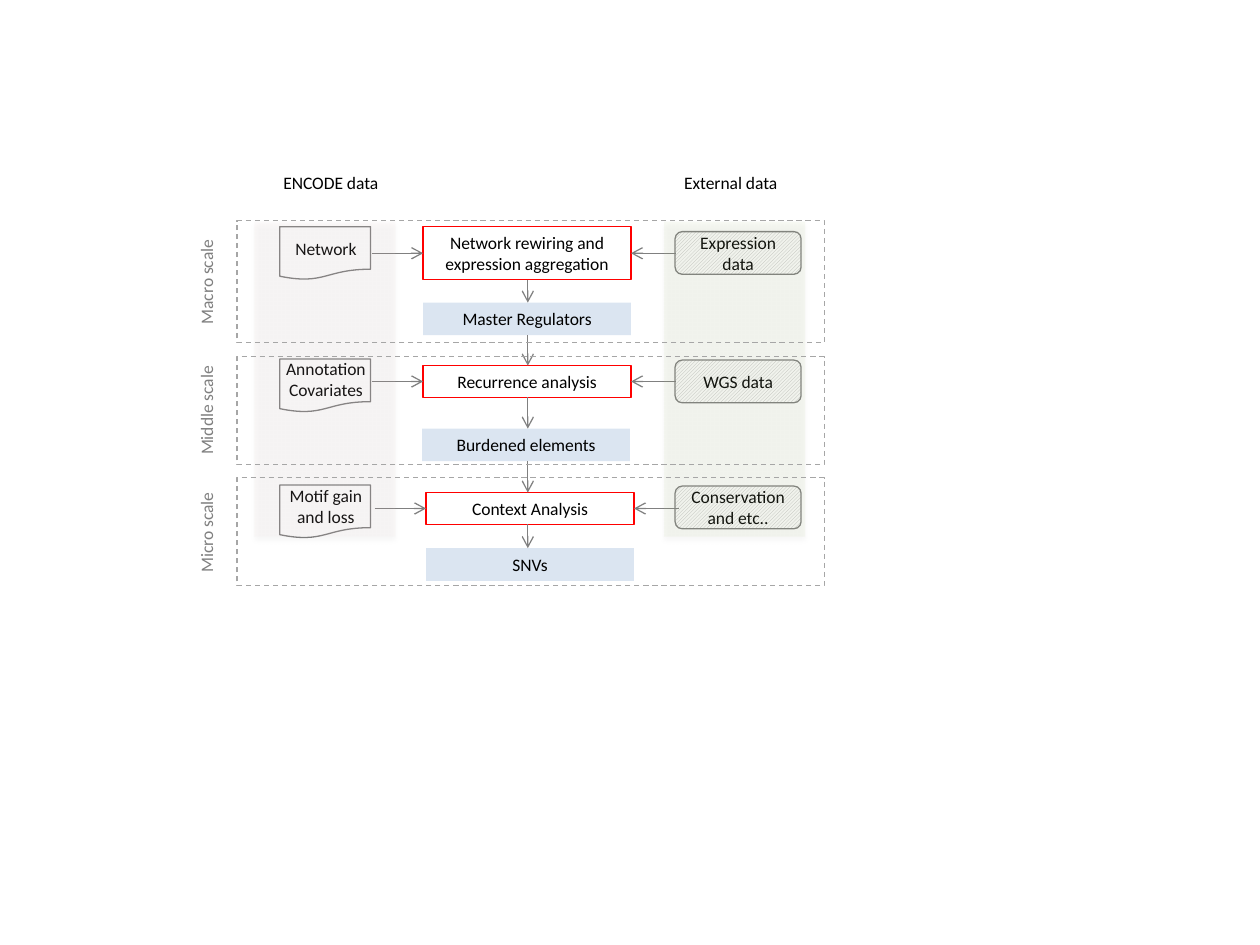
from itertools import pairwise

from lxml import etree
from pptx import Presentation
from pptx.dml.color import RGBColor
from pptx.enum.dml import MSO_LINE, MSO_PATTERN
from pptx.enum.shapes import MSO_CONNECTOR, MSO_SHAPE
from pptx.enum.text import MSO_ANCHOR, MSO_AUTO_SIZE, PP_ALIGN
from pptx.oxml import parse_xml
from pptx.oxml.ns import qn
from pptx.util import Cm, Pt

RECT = MSO_SHAPE.RECTANGLE
DOCUMENT = MSO_SHAPE.FLOWCHART_DOCUMENT
ROUNDED = MSO_SHAPE.FLOWCHART_ALTERNATE_PROCESS
STRAIGHT = MSO_CONNECTOR.STRAIGHT
HATCH = MSO_PATTERN.LIGHT_UPWARD_DIAGONAL
DASH = MSO_LINE.DASH
CENTER = PP_ALIGN.CENTER
MIDDLE = MSO_ANCHOR.MIDDLE
TOP = MSO_ANCHOR.TOP
FIT = MSO_AUTO_SIZE.SHAPE_TO_FIT_TEXT

COLORS = {
    "text": "000000", "scale": "7F7F7F", "outline": "808080",
    "frame": "A6A6A6", "analysis": "FF0000", "result": "B9CDE5",
    "encode": "F2DCDB", "external": "C3D69B",
    "hatch": "BFBFBF", "paper": "FFFFFF",
}
SHADOW = (
    '<a:effectLst xmlns:a="http://schemas.openxmlformats.org/drawingml/2006/main">'
    '<a:outerShdw blurRad="39400" dist="22900" dir="5400000" rotWithShape="0">'
    '<a:srgbClr val="000000"><a:alpha val="35000"/></a:srgbClr>'
    '</a:outerShdw></a:effectLst>'
)

ANALYSIS_W, RESULT_H = 4.19, 0.66
DOC_LEFT, DOC_W, DOC_H = 5.64, 1.83, 1.07
EXTERNAL_LEFT, EXTERNAL_W, EXTERNAL_H = 13.61, 2.54, 0.86
FLOW_X = 10.64
DOC_ARROW, EXTERNAL_ARROW = 1.04, 0.9

SCALES = [
    {"name": "Macro scale", "name_y": 5.68, "frame": (4.45, 2.46),
     "doc": (["Network"], 4.57, 4.67, 0.69),
     "external": ("Expression data", 4.67),
     "analysis": ("Network rewiring and expression aggregation", 8.53, 4.57, 1.07),
     "result": ("Master Regulators", 8.53, 6.1)},
    {"name": "Middle scale", "name_y": 8.27, "frame": (7.19, 2.18),
     "doc": (["Annotation", "Covariates"], 7.24, 7.09, 1.12),
     "external": ("WGS data", 7.26),
     "analysis": ("Recurrence analysis", 8.53, 7.37, 0.64),
     "result": ("Burdened elements", 8.51, 8.64)},
    {"name": "Micro scale", "name_y": 10.73, "frame": (9.63, 2.18),
     "doc": (["Motif gain and loss"], 9.78, 9.65, 1.12),
     "external": ("Conservation and etc..", 9.8),
     "analysis": ("Context Analysis", 8.59, 9.93, 0.64),
     "result": ("SNVs", 8.59, 11.05)},
]


def rgb(name):
    return RGBColor.from_string(COLORS[name])


class Diagram:
    font, size, weight = "Calibri", Pt(10), Pt(0.75)

    def __init__(self, slide):
        self.slide = slide

    def add_lines(self, frame, lines, color="text", anchor=MIDDLE):
        frame.vertical_anchor = anchor
        for index, line in enumerate(lines):
            paragraph = frame.add_paragraph() if index else frame.paragraphs[0]
            paragraph.alignment = CENTER
            run = paragraph.add_run()
            run.text = line
            run.font.name, run.font.size = self.font, self.size
            run.font.color.rgb = rgb(color)

    def box(self, kind, left, top, width, height, text=None, line=None,
            fill=None, opacity=100, shapes=None):
        shapes = shapes or self.slide.shapes
        box = shapes.add_shape(kind, Cm(left), Cm(top), Cm(width), Cm(height))
        box.shadow.inherit = False
        if fill:
            box.fill.solid()
            box.fill.fore_color.rgb = rgb(fill)
            tint = box._element.spPr.find(".//" + qn("a:srgbClr"))
            etree.SubElement(tint, qn("a:alpha")).set("val", str(opacity * 1000))
        else:
            box.fill.background()
        if line:
            box.line.color.rgb = rgb(line)
            box.line.width = self.weight
        else:
            box.line.fill.background()
        if text:
            self.add_lines(box.text_frame, [text])
        return box

    def label(self, left, top, width, height, lines, color="text",
              wrap=True, rotation=0, shapes=None):
        shapes = shapes or self.slide.shapes
        label = shapes.add_textbox(Cm(left), Cm(top), Cm(width), Cm(height))
        label.rotation = rotation
        label.text_frame.word_wrap = wrap
        label.text_frame.auto_size = FIT
        self.add_lines(label.text_frame, lines, color, TOP)

    def document(self, lines, top, text_top, text_height):
        shapes = self.slide.shapes.add_group_shape().shapes
        self.box(DOCUMENT, DOC_LEFT, top, DOC_W, DOC_H, line="outline", shapes=shapes)
        self.label(DOC_LEFT - 0.15, text_top, 2.16, text_height, lines, shapes=shapes)

    def external(self, text, top):
        source = self.box(ROUNDED, EXTERNAL_LEFT, top, EXTERNAL_W, EXTERNAL_H,
                          text, line="outline")
        source.fill.patterned()
        source.fill.pattern = HATCH
        source.fill.fore_color.rgb = rgb("hatch")
        source.fill.back_color.rgb = rgb("paper")

    def arrow(self, x1, y1, x2, y2):
        arrow = self.slide.shapes.add_connector(
            STRAIGHT, Cm(x1), Cm(y1), Cm(x2), Cm(y2))
        arrow.line.color.rgb = rgb("outline")
        arrow.line.width = self.weight
        properties = arrow._element.spPr
        outline = properties.find(qn("a:ln"))
        etree.SubElement(outline, qn("a:tailEnd")).set("type", "arrow")
        etree.SubElement(properties, qn("a:effectLst"))

    def panel(self, left, fill):
        panel = self.box(RECT, left, 4.47, 2.84, 6.35, fill=fill, opacity=10)
        properties = panel._element.spPr
        properties.replace(properties.find(qn("a:effectLst")), parse_xml(SHADOW))

    def scale(self, scale):
        result, result_left, result_top = scale["result"]
        analysis, left, top, height = scale["analysis"]
        self.box(RECT, result_left, result_top, ANALYSIS_W, RESULT_H, result,
                 fill="result", opacity=50)
        self.box(RECT, left, top, ANALYSIS_W, height, analysis, line="analysis")
        self.document(*scale["doc"])
        self.external(*scale["external"])
        middle, right = top + height / 2, left + ANALYSIS_W
        self.arrow(left - DOC_ARROW, middle, left, middle)
        self.arrow(right + EXTERNAL_ARROW, middle, right, middle)
        self.arrow(FLOW_X, top + height, FLOW_X, result_top)

    def frame(self, top, height):
        frame = self.box(RECT, 4.78, top, 11.84, height, line="frame")
        frame.line.dash_style = DASH


def main():
    deck = Presentation()
    deck.slide_width, deck.slide_height = Cm(25.4), Cm(19.05)
    diagram = Diagram(deck.slides.add_slide(deck.slide_layouts[6]))

    for scale in SCALES:
        diagram.scale(scale)
    for upper, lower in pairwise(SCALES):
        diagram.arrow(FLOW_X, upper["result"][2] + RESULT_H,
                      FLOW_X, lower["analysis"][2])

    diagram.panel(5.13, "encode")
    diagram.panel(13.39, "external")
    diagram.label(5.44, 3.35, 2.46, 0.69, ["ENCODE data"], wrap=False)
    diagram.label(13.51, 3.35, 2.44, 0.69, ["External data"], wrap=False)

    for scale in SCALES:
        diagram.frame(*scale["frame"])
        diagram.label(2.92, scale["name_y"] - 0.34, 2.49, 0.69, [scale["name"]],
                      color="scale", rotation=270)

    deck.save("out.pptx")


if __name__ == "__main__":
    main()
